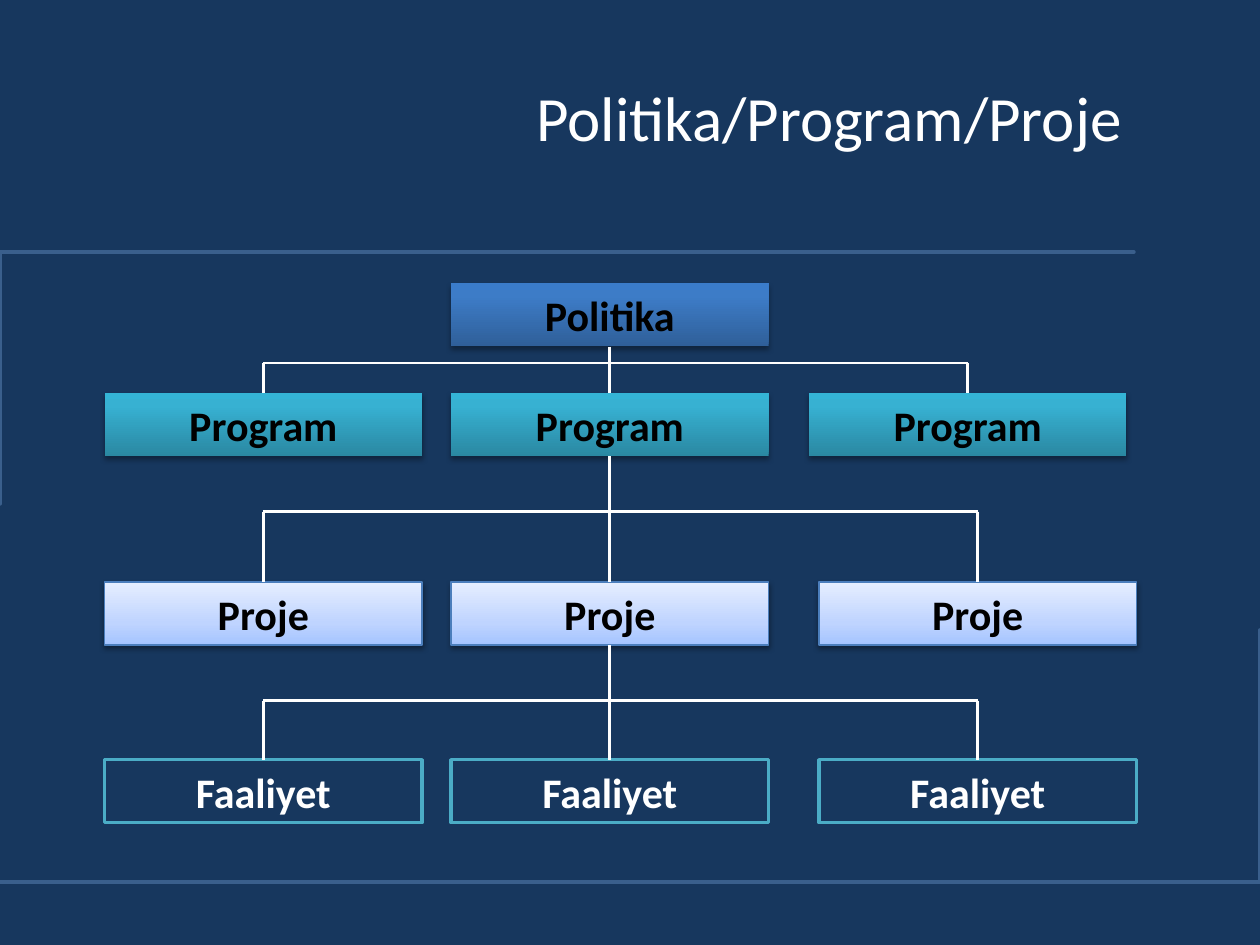
import pptx
import pptx.util
import pptx.dml.color
import pptx.enum.shapes
import pptx.enum.text
import pptx.oxml.ns
from lxml import etree

TITLE = "Politika/Program/Proje"
WHITE, BLACK, NAVY, FRAME_EDGE = "FFFFFF", "000000", "17375E", "3A5F8C"
FRAMES = [
    [(0.2, 1.7), (9.49, 1.94), (0.44, 1.97), (0.43, 3.75)],
    [(9.8, 7.37), (0.35, 7.14), (9.54, 7.11), (9.57, 5.4)],
]
BOX_WIDTH, BOX_HEIGHT = 2.52, 0.5
BLUE = [(0, "2F5F99"), (80, "3D7CC7"), (100, "3A7CCB")]
TEAL = [(0, "2A88A2"), (80, "37B1D2"), (100, "34B4D6")]
PALE = [(0, "A4C4FF"), (35, "BFD4FF"), (100, "E6EEFF")]
LEVELS = [
    dict(label="Politika", top=2.25, lefts=[3.58], ink=BLACK,
         stops=BLUE, edge=None, shadow=(35, 1.8)),
    dict(label="Program", top=3.12, lefts=[0.83, 3.58, 6.42], ink=BLACK,
         stops=TEAL, edge=None, shadow=(35, 1.8), rail=2.88),
    dict(label="Proje", top=4.62, lefts=[0.83, 3.58, 6.5], ink=BLACK,
         stops=PALE, edge=("4B7EBC", 0.75), shadow=(38, 1.6), rail=4.06),
    dict(label="Faaliyet", top=6.03, lefts=[0.83, 3.58, 6.5], ink=WHITE,
         stops=None, edge=("4BACC6", 2), shadow=None, rail=5.56),
]

Inches, Pt = pptx.util.Inches, pptx.util.Pt
qn = pptx.oxml.ns.qn


def color(value):
    return pptx.dml.color.RGBColor.from_string(value)


def add_element(parent, tag, **attributes):
    return etree.SubElement(parent, qn(tag), {k: str(v) for k, v in attributes.items()})


def set_line(shape, edge):
    if edge is None:
        shape.line.fill.background()
    else:
        shape.line.color.rgb = color(edge[0])
        shape.line.width = Pt(edge[1])


def set_gradient(shape, stops):
    shape.fill.gradient()
    gradient = shape._element.spPr.find(qn("a:gradFill"))
    for child in list(gradient):
        gradient.remove(child)
    stop_list = add_element(gradient, "a:gsLst")
    for position, value in stops:
        stop = add_element(stop_list, "a:gs", pos=position * 1000)
        add_element(stop, "a:srgbClr", val=value)
    add_element(gradient, "a:lin", ang=270 * 60000, scaled=0)


def set_shadow(shape, opacity, distance):
    effects = shape._element.spPr.find(qn("a:effectLst"))
    shadow = add_element(effects, "a:outerShdw", blurRad=Pt(3.1), dist=Pt(distance),
                         dir=90 * 60000, rotWithShape=0)
    shade = add_element(shadow, "a:srgbClr", val=BLACK)
    add_element(shade, "a:alpha", val=opacity * 1000)


def write(shape, text, size, ink, bold=False):
    frame = shape.text_frame
    frame.word_wrap = True
    frame.vertical_anchor = pptx.enum.text.MSO_ANCHOR.MIDDLE
    para = frame.paragraphs[0]
    para.alignment = pptx.enum.text.PP_ALIGN.CENTER
    span = para.add_run()
    span.text = text
    span.font.name = "Calibri"
    span.font.size = Pt(size)
    span.font.bold = bold
    span.font.color.rgb = color(ink)


def add_frame(page, points):
    builder = page.shapes.build_freeform(*points[0], scale=Inches(1))
    builder.add_line_segments(points[1:], close=True)
    frame = builder.convert_to_shape()
    frame.shadow.inherit = False
    frame.fill.solid()
    frame.fill.fore_color.rgb = color(WHITE)
    set_line(frame, (FRAME_EDGE, 2))


def add_box(page, left, level):
    box = page.shapes.add_shape(
        pptx.enum.shapes.MSO_SHAPE.RECTANGLE, Inches(left), Inches(level["top"]),
        Inches(BOX_WIDTH), Inches(BOX_HEIGHT))
    box.shadow.inherit = False
    if level["stops"]:
        set_gradient(box, level["stops"])
    else:
        box.fill.background()
    set_line(box, level["edge"])
    if level["shadow"]:
        set_shadow(box, *level["shadow"])
    write(box, level["label"], 24, level["ink"], bold=True)


def add_line(page, x1, y1, x2, y2):
    line = page.shapes.add_connector(
        pptx.enum.shapes.MSO_CONNECTOR.STRAIGHT,
        Inches(x1), Inches(y1), Inches(x2), Inches(y2))
    set_line(line, (WHITE, 1.5))
    add_element(line._element.spPr, "a:effectLst")


def add_branches(page, parent, level):
    first, middle, last = [left + BOX_WIDTH / 2 for left in level["lefts"]]
    rail, top = level["rail"], level["top"]
    add_line(page, first, rail, last, rail)
    add_line(page, first, rail, first, top)
    add_line(page, middle, parent["top"] + BOX_HEIGHT, middle, top)
    add_line(page, last, rail, last, top)


def main():
    deck = pptx.Presentation()
    deck.slide_width, deck.slide_height = Inches(10), Inches(7.5)
    page = deck.slides.add_slide(deck.slide_layouts[6])
    page.background.fill.solid()
    page.background.fill.fore_color.rgb = color(NAVY)
    for points in FRAMES:
        add_frame(page, points)
    title = page.shapes.add_textbox(Inches(3.66), Inches(0.3), Inches(5.84), Inches(1.25))
    write(title, TITLE, 36, WHITE)
    for level in LEVELS:
        for left in level["lefts"]:
            add_box(page, left, level)
    for parent, level in zip(LEVELS, LEVELS[1:]):
        add_branches(page, parent, level)
    deck.save("out.pptx")


if __name__ == "__main__":
    main()
